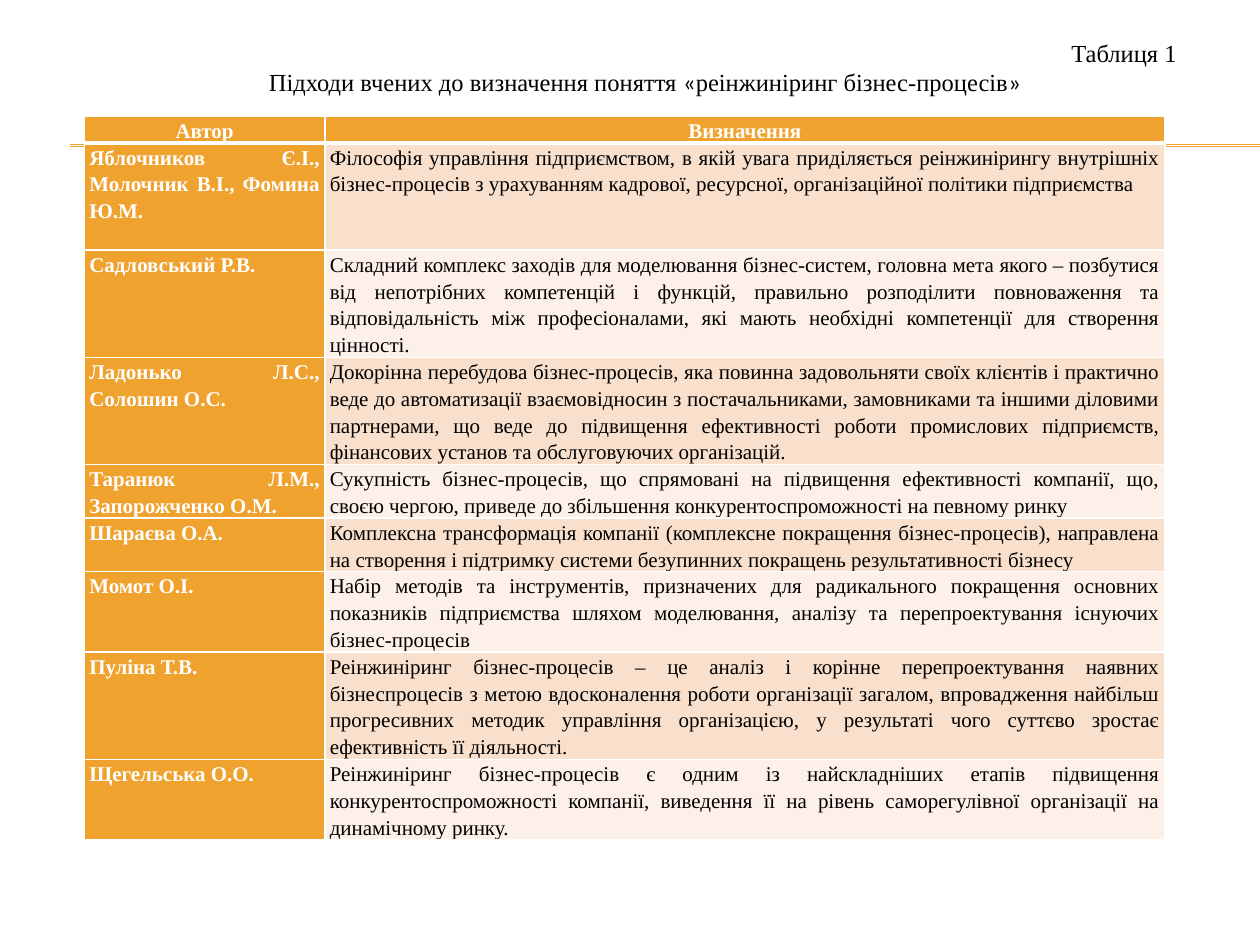
from dataclasses import dataclass

from lxml import etree
from pptx import Presentation
from pptx.dml.color import RGBColor
from pptx.enum.shapes import MSO_CONNECTOR
from pptx.enum.text import MSO_ANCHOR, MSO_AUTO_SIZE, PP_ALIGN
from pptx.oxml.ns import qn
from pptx.util import Cm, Pt

STRAIGHT = MSO_CONNECTOR.STRAIGHT
MIDDLE = MSO_ANCHOR.MIDDLE
NO_AUTOFIT = MSO_AUTO_SIZE.NONE
LEFT_TO_RIGHT = PP_ALIGN.JUSTIFY
CENTER = PP_ALIGN.CENTER
RIGHT = PP_ALIGN.RIGHT


@dataclass(frozen=True)
class Theme:
    accent: str = "F0A22E"
    band_dark: str = "F9E0CD"
    band_light: str = "FCF0E8"
    white: str = "FFFFFF"
    black: str = "000000"
    font: str = "Times New Roman"
    quote_font: str = "Calibri"
    title_size: float = 14
    table_size: float = 12
    thin: float = 1
    thick: float = 3
    rule: float = 0.75


@dataclass(frozen=True)
class Box:
    left: float
    top: float
    width: float
    height: float


THEME = Theme()
TITLE_BOX = Box(1.9, 0.64, 22.2, 1.44)
RULE_BOX = Box(1.42, 2.92, 23.98, 0.03)
TABLE_BOX = Box(1.7, 2.34, 21.79, 14.58)
AUTHOR_SHARE = 0.2225

HEADINGS = ("Автор", "Визначення")
DEFINITIONS = [
    ("Яблочников Є.І., Молочник В.І., Фомина Ю.М. ",
     "Філософія управління підприємством, в якій увага приділяється реінжинірингу внутрішніх "
     "бізнес-процесів з урахуванням кадрової, ресурсної, організаційної політики підприємства", 4),
    ("Садловський Р.В. ",
     "Складний комплекс заходів для моделювання бізнес-систем, головна мета якого – позбутися "
     "від непотрібних компетенцій і функцій, правильно розподілити повноваження та "
     "відповідальність між професіоналами, які мають необхідні компетенції для створення "
     "цінності.", 4),
    ("Ладонько Л.С., Солошин О.C. ",
     "Докорінна перебудова бізнес-процесів, яка повинна задовольняти своїх клієнтів і практично "
     "веде до автоматизації взаємовідносин з постачальниками, замовниками та іншими діловими "
     "партнерами, що веде до підвищення ефективності роботи промислових підприємств, "
     "фінансових установ та обслуговуючих організацій.", 4),
    ("Таранюк Л.М., Запорожченко О.М. ",
     "Сукупність бізнес-процесів, що спрямовані на підвищення ефективності компанії, що, "
     "своєю чергою, приведе до збільшення конкурентоспроможності на певному ринку", 2),
    ("Шараєва О.А. ",
     "Комплексна трансформація компанії (комплексне покращення бізнес-процесів), направлена "
     "на створення і підтримку системи безупинних покращень результативності бізнесу", 2),
    ("Момот О.І. ",
     "Набір методів та інструментів, призначених для радикального покращення основних "
     "показників підприємства шляхом моделювання, аналізу та перепроектування існуючих "
     "бізнес-процесів", 3),
    ("Пуліна Т.В.",
     "Реінжиніринг бізнес-процесів – це аналіз і корінне перепроектування наявних "
     "бізнеспроцесів з метою вдосконалення роботи організації загалом, впровадження найбільш "
     "прогресивних методик управління організацією, у результаті чого суттєво зростає "
     "ефективність її діяльності.", 4),
    ("Щегельська О.О.",
     "Реінжиніринг бізнес-процесів є одним із найскладніших етапів підвищення "
     "конкурентоспроможності компанії, виведення її на рівень саморегулівної організації на "
     "динамічному ринку.", 3),
]


def color(value):
    return RGBColor.from_string(value)


def write_text(paragraph, text, *, size, fill, font=THEME.font, bold=False,
               align=None, spacing=None):
    if align is not None:
        paragraph.alignment = align
    if spacing is not None:
        paragraph.line_spacing = spacing
    run = paragraph.add_run()
    run.text = text
    run.font.name = font
    run.font.size = Pt(size)
    run.font.bold = bold
    run.font.color.rgb = color(fill)


def add_title(slide, box):
    title = slide.shapes.title
    title.left, title.top = Cm(box.left), Cm(box.top)
    title.width, title.height = Cm(box.width), Cm(box.height)
    frame = title.text_frame
    frame.word_wrap = True
    frame.auto_size = NO_AUTOFIT
    frame.vertical_anchor = MIDDLE
    style = {"size": THEME.title_size, "fill": THEME.black}
    write_text(frame.paragraphs[0], "Таблиця 1 ", align=RIGHT, **style)
    caption = frame.add_paragraph()
    for text, font in (
        ("Підходи вчених до визначення поняття ", THEME.font),
        ("«", THEME.quote_font),
        ("реінжиніринг бізнес-процесів", THEME.font),
        ("»", THEME.quote_font),
    ):
        write_text(caption, text, font=font, align=CENTER, **style)


def add_double_rule(slide, box):
    for top in (box.top, box.top + box.height):
        rule = slide.shapes.add_connector(
            STRAIGHT, Cm(box.left), Cm(top), Cm(box.left + box.width), Cm(top))
        rule.line.color.rgb = color(THEME.accent)
        rule.line.width = Pt(THEME.rule)
        etree.SubElement(rule._element.spPr, qn("a:effectLst"))


def set_borders(cell, top, bottom):
    properties = cell._tc.get_or_add_tcPr()
    widths = {"L": THEME.thin, "R": THEME.thin, "T": top, "B": bottom}
    for index, (side, width) in enumerate(widths.items()):
        line = etree.Element(qn(f"a:ln{side}"), w=str(Pt(width)))
        solid = etree.SubElement(line, qn("a:solidFill"))
        etree.SubElement(solid, qn("a:srgbClr"), val=THEME.white)
        properties.insert(index, line)


def fill_cell(cell, text, *, fill, text_fill, bold, align, top, bottom):
    cell.margin_left = cell.margin_right = Cm(0.1)
    cell.margin_top = cell.margin_bottom = 0
    cell.fill.solid()
    cell.fill.fore_color.rgb = color(fill)
    set_borders(cell, top, bottom)
    write_text(cell.text_frame.paragraphs[0], text, size=THEME.table_size,
               fill=text_fill, bold=bold, align=align, spacing=1.15)


def add_definition_table(slide, box):
    rows = [(*HEADINGS, 1), *DEFINITIONS]
    line_height = box.height / sum(lines for _, _, lines in rows)
    table = slide.shapes.add_table(
        len(rows), len(HEADINGS), Cm(box.left), Cm(box.top),
        Cm(box.width), Cm(box.height)).table
    for column, share in zip(table.columns, (AUTHOR_SHARE, 1 - AUTHOR_SHARE)):
        column.width = Cm(box.width * share)
    for row_index, (author, definition, lines) in enumerate(rows):
        table.rows[row_index].height = Cm(line_height * lines)
        band = THEME.band_dark if row_index % 2 else THEME.band_light
        for column_index, text in enumerate((author, definition)):
            accented = row_index == 0 or column_index == 0
            fill_cell(
                table.cell(row_index, column_index), text,
                fill=THEME.accent if accented else band,
                text_fill=THEME.white if accented else THEME.black,
                bold=accented,
                align=LEFT_TO_RIGHT if row_index else CENTER,
                top=THEME.thick if row_index == 1 else THEME.thin,
                bottom=THEME.thin if row_index else THEME.thick)


def main():
    presentation = Presentation()
    presentation.slide_width, presentation.slide_height = Cm(25.4), Cm(19.05)
    slide = presentation.slides.add_slide(presentation.slide_layouts[5])
    add_double_rule(slide, RULE_BOX)
    add_definition_table(slide, TABLE_BOX)
    add_title(slide, TITLE_BOX)
    presentation.save("out.pptx")


if __name__ == "__main__":
    main()
